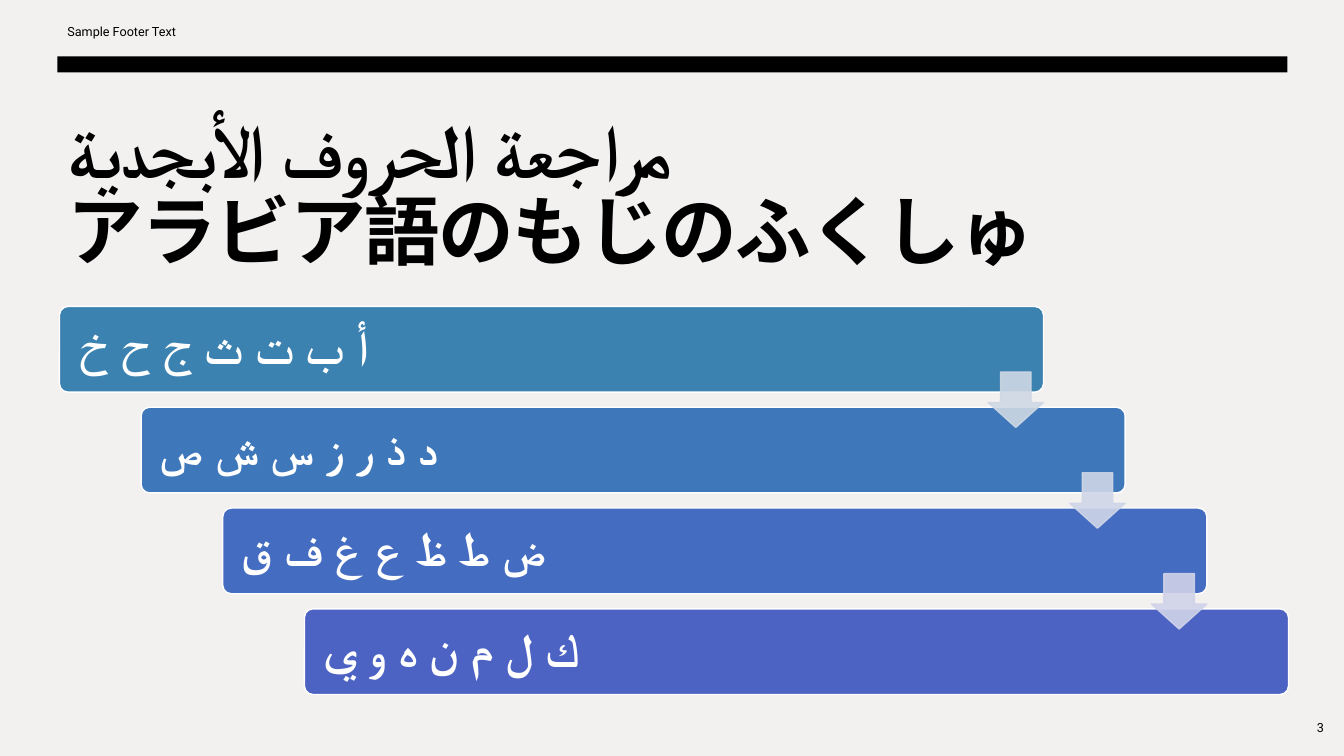
"""Build the Arabic alphabet review slide with four stepped letter bars."""
import pptx
import pptx.util
import pptx.dml.color
import pptx.enum.shapes
import pptx.enum.text
import lxml.etree

Inches = pptx.util.Inches
Pt = pptx.util.Pt
RGBColor = pptx.dml.color.RGBColor
SHAPE = pptx.enum.shapes.MSO_SHAPE
ALIGN = pptx.enum.text.PP_ALIGN
ANCHOR = pptx.enum.text.MSO_ANCHOR
PAPER = RGBColor(0xF3, 0xF0, 0xF0)
BLACK = RGBColor(0, 0, 0)
WHITE = RGBColor(0xFF, 0xFF, 0xFF)
FONT = "Roboto"

deck = pptx.Presentation()
deck.slide_width, deck.slide_height = Inches(13.33), Inches(7.5)
slide = deck.slides.add_slide(deck.slide_layouts[6])
slide.background.fill.solid()
slide.background.fill.fore_color.rgb = PAPER


def write(shape, text, size=9, color=BLACK, bold=False, align=ALIGN.LEFT,
          anchor=ANCHOR.MIDDLE, space=None, track=None):
    frame = shape.text_frame
    frame.word_wrap = True
    frame.vertical_anchor = anchor
    para = frame.paragraphs[0]
    para.text = text
    para.alignment = align
    para.line_spacing = space
    for run in para.runs:
        font = run.font
        font.name, font.size, font.bold = FONT, Pt(size), bold
        font.color.rgb = color
        props = run._r.get_or_add_rPr()
        if track:
            props.set("spc", str(track * 100))
        for script in ("ea", "cs"):
            tag = pptx.oxml.ns.qn(f"a:{script}")
            lxml.etree.SubElement(props, tag).set("typeface", FONT)


def draw(kind, left, top, width, height, fill, line=None, alpha=None):
    shape = slide.shapes.add_shape(
        kind, Inches(left), Inches(top), Inches(width), Inches(height))
    shape.shadow.inherit = False
    shape.fill.solid()
    shape.fill.fore_color.rgb = fill
    if line is None:
        shape.line.fill.background()
    else:
        shape.line.color.rgb = line
        shape.line.width = Pt(1)
    if alpha:
        for color in shape._element.spPr.iter(pptx.oxml.ns.qn("a:srgbClr")):
            tag = pptx.oxml.ns.qn("a:alpha")
            lxml.etree.SubElement(color, tag).set("val", str(alpha * 1000))
    return shape


title = slide.shapes.add_textbox(Inches(0.57), Inches(1.07), Inches(12.2), Inches(1.79))
write(title, "مراجعة الحروف الأبجدية\vアラビア語のもじのふくしゅ", size=54, bold=True,
      anchor=ANCHOR.TOP, space=0.9, track=-1)
footer = slide.shapes.add_textbox(Inches(0.57), Inches(0.11), Inches(4.5), Inches(0.4))
write(footer, "Sample Footer Text")
draw(SHAPE.RECTANGLE, 0.57, 0.56, 12.2, 0.16, BLACK)
number = slide.shapes.add_textbox(Inches(12.53), Inches(7.02), Inches(0.7), Inches(0.4))
write(number, "3", align=ALIGN.RIGHT)

rows = [
    ("أ ب ت ث ج ح خ", RGBColor(0x3B, 0x82, 0xB1)),
    ("د ذ ر ز س ش ص", RGBColor(0x3E, 0x77, 0xBA)),
    ("ض ط ظ ع غ ف ق", RGBColor(0x44, 0x6C, 0xC0)),
    ("ك ل م ن ه و ي", RGBColor(0x4D, 0x63, 0xC3)),
]
tints = [
    RGBColor(0xCE, 0xD8, 0xE4),
    RGBColor(0xCF, 0xD6, 0xE7),
    RGBColor(0xD0, 0xD3, 0xE9),
]
LEFT, TOP, STEP, DROP = 0.59, 3.04, 0.81, 1

for i, (letters, fill) in enumerate(rows):
    bar = draw(SHAPE.ROUNDED_RECTANGLE, LEFT + i * STEP, TOP + i * DROP,
               9.76, 0.85, fill, line=WHITE)
    bar.adjustments[0] = 0.1
    bar.text_frame.margin_left = Inches(0.16)
    write(bar, letters, size=34, color=WHITE, bold=True, space=0.9)

for i, tint in enumerate(tints):
    arrow = draw(SHAPE.DOWN_ARROW, LEFT + 9.21 + i * STEP, TOP + 0.65 + i * DROP,
                 0.55, 0.55, tint, line=tint, alpha=90)
    arrow.adjustments[0] = 0.55
    arrow.adjustments[1] = 0.45

deck.save("out.pptx")
